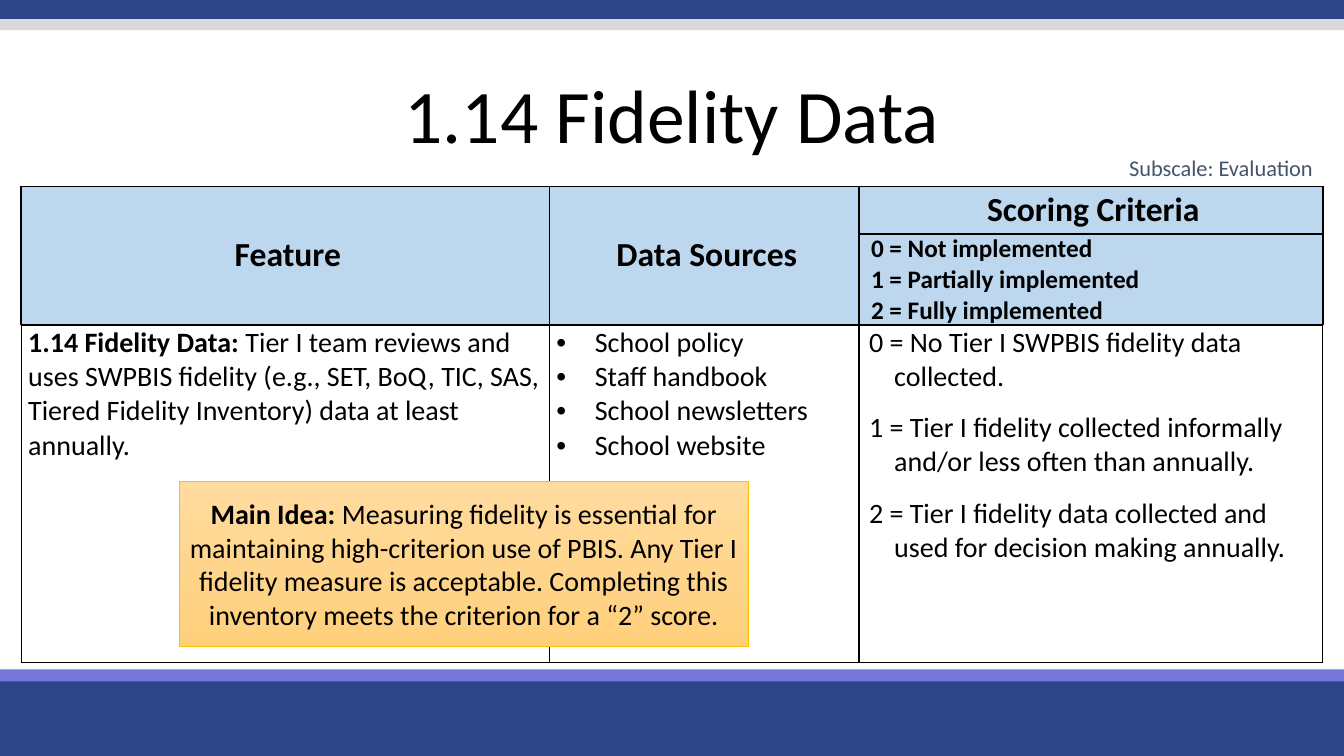
from lxml import etree
from pptx import Presentation
from pptx.dml.color import RGBColor
from pptx.enum.shapes import MSO_SHAPE
from pptx.enum.text import MSO_ANCHOR, PP_ALIGN
from pptx.oxml.ns import qn
from pptx.util import Inches, Pt

RECTANGLE = MSO_SHAPE.RECTANGLE
TOP, MIDDLE = MSO_ANCHOR.TOP, MSO_ANCHOR.MIDDLE
LEFT, CENTER, RIGHT = PP_ALIGN.LEFT, PP_ALIGN.CENTER, PP_ALIGN.RIGHT

BLACK, HEADER_BLUE, WHITE = "000000", "BDD7EE", "FFFFFF"
WIDTH = 13.33
BANDS = [  # top, height, colour
    (6.7, 0.8, "2E4488"),
    (6.64, 0.12, "7476DA"),
    (0, 0.19, "2E4488"),
    (0.19, 0.11, "D9D9D9"),
]

# A paragraph is a list of (text, bold) runs.
TITLE = [[("1.14 Fidelity Data", False)]]
SUBSCALE = [[("Subscale: Evaluation", False)]]
MAIN_IDEA = [[
    ("Main Idea: ", True),
    ("Measuring fidelity is essential for maintaining high-criterion use of PBIS. "
     "Any Tier I fidelity measure is acceptable. Completing this inventory meets "
     "the criterion for a “2” score.", False),
]]
HEADINGS = ["Feature", "Data Sources", "Scoring Criteria"]
SCALE = ["0 = Not implemented", "1 = Partially implemented", "2 = Fully implemented"]
FEATURE = [[
    ("1.14 Fidelity Data: ", True),
    ("Tier I team reviews and uses SWPBIS fidelity (e.g., SET, BoQ, TIC, SAS, "
     "Tiered Fidelity Inventory) data at least annually.", False),
]]
SOURCES = ["School policy", "Staff handbook", "School newsletters", "School website"]
CRITERIA = [
    "0 = No Tier I SWPBIS fidelity data collected.",
    "1 = Tier I fidelity collected informally and/or less often than annually.",
    "2 = Tier I fidelity data collected and used for decision making annually.",
]

TABLE_LEFT = 0.21
COLUMNS = [5.24, 3.07, 4.6]
HEADER_TOP, HEADER_ROWS = 1.85, [0.47, 0.9]
BODY_TOP, BODY_ROWS = 3.23, [3.34]
HEADER_INDENT = (0.36, -0.31)


def color(value):
    return RGBColor.from_string(value)


def plain(lines, bold=False):
    """Turn lines into one-run paragraphs."""
    return [[(line, bold)] for line in lines]


def write(frame, paragraphs, size, align=LEFT, font_color=BLACK, indent=None,
          bullet=None, after=None):
    frame.word_wrap = True
    for index, runs in enumerate(paragraphs):
        paragraph = frame.paragraphs[0] if index == 0 else frame.add_paragraph()
        paragraph.alignment = align
        if after:
            paragraph.space_after = Pt(after)
        properties = paragraph._p.get_or_add_pPr()
        if indent:
            for name, value in zip(("marL", "indent"), indent):
                properties.set(name, str(Inches(value)))
        if bullet:
            etree.SubElement(properties, qn("a:buFont"), typeface="Arial")
            etree.SubElement(properties, qn("a:buChar"), char=bullet)
        for text, bold in runs:
            run = paragraph.add_run()
            run.text = text
            run.font.color.rgb = color(font_color)
            for name, value in {"name": "Calibri", "size": Pt(size), "bold": bold}.items():
                setattr(run.font, name, value)


def add_rectangle(shapes, left, top, width, height):
    shape = shapes.add_shape(RECTANGLE, *map(Inches, (left, top, width, height)))
    shape.shadow.inherit = False
    return shape


def add_text(shapes, box, paragraphs, size, **formats):
    frame = shapes.add_textbox(*map(Inches, box)).text_frame
    write(frame, paragraphs, size, **formats)
    return frame


def style_cell(cell, fill, borders):
    """Set fill, margins and border widths in points (left, right, top, bottom)."""
    properties = cell._tc.get_or_add_tcPr()
    for side, points in zip("LRTB", borders):
        line = etree.SubElement(properties, qn(f"a:ln{side}"), w=str(Pt(points)))
        solid = etree.SubElement(line, qn("a:solidFill"))
        etree.SubElement(solid, qn("a:srgbClr"), val=BLACK)
    cell.fill.solid()
    cell.fill.fore_color.rgb = color(fill)
    margins = {"margin_left": 0.07, "margin_right": 0.07, "margin_top": 0, "margin_bottom": 0}
    for name, value in margins.items():
        setattr(cell, name, Inches(value))


def add_grid(shapes, top, rows, fill, borders):
    table = shapes.add_table(len(rows), len(COLUMNS), Inches(TABLE_LEFT), Inches(top),
                             Inches(sum(COLUMNS)), Inches(sum(rows))).table
    table.first_row = table.horz_banding = False
    for column, width in zip(table.columns, COLUMNS):
        column.width = Inches(width)
    for row, height, widths in zip(table.rows, rows, borders):
        row.height = Inches(height)
        for cell in row.cells:
            style_cell(cell, fill, widths)
    return table


def add_header(shapes):
    table = add_grid(shapes, HEADER_TOP, HEADER_ROWS, HEADER_BLUE,
                     [(1.5, 1.5, 1.5, 1.5), (1.5, 1.5, 1.5, 1)])
    for column, heading in enumerate(HEADINGS):
        cell = table.cell(0, column)
        if column < 2:
            cell.merge(table.cell(1, column))
        cell.vertical_anchor = MIDDLE
        write(cell.text_frame, plain([heading], True), 24, CENTER, indent=HEADER_INDENT)
    write(table.cell(1, 2).text_frame, plain(SCALE, True), 18, indent=HEADER_INDENT)


def add_body(shapes):
    table = add_grid(shapes, BODY_TOP, BODY_ROWS, WHITE, [(1, 1, 1, 1)])
    contents = [
        (FEATURE, {}),
        (plain(SOURCES), {"indent": (0.38, -0.38), "bullet": "•"}),
        (plain(CRITERIA), {"indent": (0.28, -0.25), "after": 12}),
    ]
    for cell, (paragraphs, formats) in zip(table.rows[0].cells, contents):
        cell.vertical_anchor = TOP
        write(cell.text_frame, paragraphs, 20, **formats)


def add_main_idea(shapes):
    box = add_rectangle(shapes, 1.78, 4.78, 5.64, 1.63)
    box.fill.gradient()
    box.fill.gradient_angle = 270
    for stop, value in zip(box.fill.gradient_stops, ("FFDB9E", "FFD07C")):
        stop.color.rgb = color(value)
    for stop, position in zip(box.fill.gradient_stops, (0, 1)):
        stop.position = position
    box.line.color.rgb = color("FFC000")
    box.line.width = Pt(0.5)
    box.text_frame.vertical_anchor = MIDDLE
    write(box.text_frame, MAIN_IDEA, 20, CENTER)


def main():
    presentation = Presentation()
    presentation.slide_width, presentation.slide_height = Inches(WIDTH), Inches(7.5)
    shapes = presentation.slides.add_slide(presentation.slide_layouts[6]).shapes
    for top, height, fill in BANDS:
        band = add_rectangle(shapes, 0, top, WIDTH, height)
        band.fill.solid()
        band.fill.fore_color.rgb = color(fill)
        band.line.fill.background()
    title = add_text(shapes, (0, 0.81, WIDTH, 0.74), TITLE, 54, align=CENTER)
    title.vertical_anchor = MIDDLE
    title.paragraphs[0].line_spacing = 0.9
    add_header(shapes)
    add_body(shapes)
    add_main_idea(shapes)
    add_text(shapes, (10.94, 1.48, 2.18, 0.37), SUBSCALE, 16, align=RIGHT, font_color="44546A")
    presentation.save("out.pptx")


if __name__ == "__main__":
    main()
